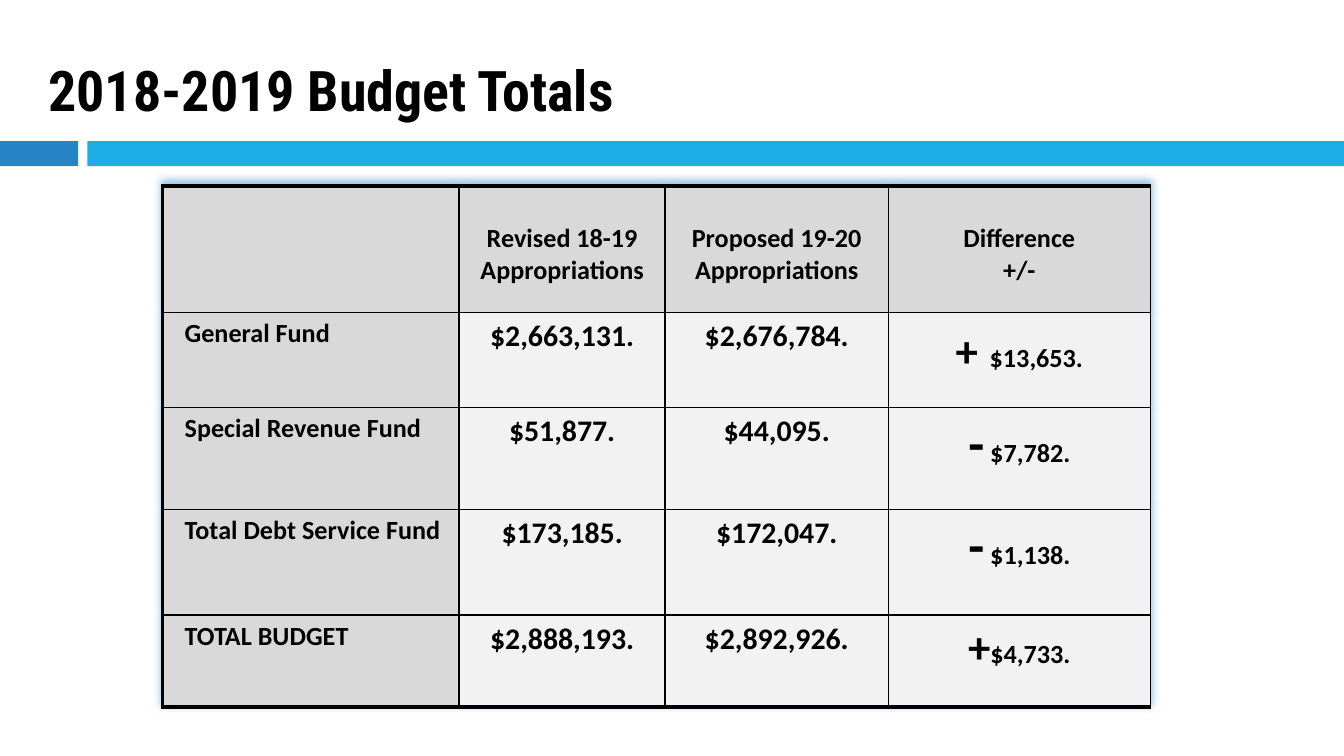
from dataclasses import dataclass

from lxml import etree
from pptx import Presentation
from pptx.dml.color import RGBColor
from pptx.enum.shapes import MSO_SHAPE
from pptx.enum.text import MSO_ANCHOR, MSO_AUTO_SIZE, PP_ALIGN
from pptx.oxml.ns import qn
from pptx.util import Cm, Pt

RECTANGLE = MSO_SHAPE.RECTANGLE
LEFT, CENTER = PP_ALIGN.LEFT, PP_ALIGN.CENTER
TOP, MIDDLE = MSO_ANCHOR.TOP, MSO_ANCHOR.MIDDLE
NO_AUTOFIT = MSO_AUTO_SIZE.NONE
TITLE_ONLY = 5


@dataclass(frozen=True)
class Theme:
    """Colours, fonts and type sizes of the slide."""

    text: str = "000000"
    border: str = "000000"
    dark_bar: str = "2683C6"
    light_bar: str = "1CADE4"
    label_fill: str = "D9D9D9"
    value_fill: str = "F2F2F2"
    title_font: str = "Roboto Condensed"
    table_font: str = "Calibri"
    title: int = 30
    label: int = 14
    amount: int = 16
    plus: int = 24
    minus: int = 28
    thin: float = 1
    thick: float = 2.25


THEME = Theme()
COLUMN_WIDTHS = (5.61, 3.89, 4.22, 4.95)
ROW_HEIGHTS = (2.4, 1.79, 1.93, 2.0, 1.73)
HEADERS = (
    (),
    ("Revised 18-19", "Appropriations"),
    ("Proposed 19-20", "Appropriations"),
    ("Difference", "+/-"),
)
FUNDS = (
    ("General Fund", "$2,663,131.", "$2,676,784.",
     (("+", THEME.plus), (" ", THEME.minus), ("$13,653.", THEME.label))),
    ("Special Revenue Fund", "$51,877.", "$44,095.",
     (("-", THEME.minus), (" $7,782.", THEME.label))),
    ("Total Debt Service Fund", "$173,185.", "$172,047.",
     (("-", THEME.minus), (" $1,138.", THEME.label))),
    ("TOTAL BUDGET", "$2,888,193.", "$2,892,926.",
     (("+", THEME.plus), ("$4,733.", THEME.label))),
)


def add_run(paragraph, text, size, font_name):
    """Add one bold run to a paragraph."""
    run = paragraph.add_run()
    run.text = text
    run.font.name = font_name
    run.font.size = Pt(size)
    run.font.bold = True
    run.font.color.rgb = RGBColor.from_string(THEME.text)


def set_title(slide, text):
    """Place and fill the title placeholder."""
    title = slide.shapes.title
    title.left, title.top = Cm(0.66), Cm(0.74)
    title.width, title.height = Cm(19.35), Cm(1.9)
    frame = title.text_frame
    frame.auto_size = NO_AUTOFIT
    frame.vertical_anchor = MIDDLE
    paragraph = frame.paragraphs[0]
    paragraph.alignment = LEFT
    add_run(paragraph, text, THEME.title, THEME.title_font)


def add_bar(slide, left, width, color):
    """Add one segment of the band under the title."""
    bar = slide.shapes.add_shape(RECTANGLE, Cm(left), Cm(2.67), Cm(width), Cm(0.47))
    bar.shadow.inherit = False
    bar.fill.solid()
    bar.fill.fore_color.rgb = RGBColor.from_string(color)
    bar.line.fill.background()


def add_color(parent, color):
    """Append an RGB colour element and return it."""
    return etree.SubElement(parent, qn("a:srgbClr"), val=color)


def style_cell(cell, row, column):
    """Give a cell its borders, fill and margins."""
    properties = cell._tc.get_or_add_tcPr()
    outer_sides = {
        "L": column == 0,
        "R": False,
        "T": row == 0,
        "B": row == len(FUNDS),
    }
    for side, is_outer in outer_sides.items():
        width = Pt(THEME.thick if is_outer else THEME.thin)
        line = etree.SubElement(properties, qn(f"a:ln{side}"), w=str(width))
        add_color(etree.SubElement(line, qn("a:solidFill")), THEME.border)
    is_label = row == 0 or column == 0
    cell.fill.solid()
    cell.fill.fore_color.rgb = RGBColor.from_string(
        THEME.label_fill if is_label else THEME.value_fill)
    cell.margin_left = Cm(0.42 if column == 0 else 0.18)
    cell.margin_right = Cm(0.18)
    cell.margin_top = Cm(0.7 if row == 0 else 0.1)
    cell.margin_bottom = Cm(0.1)
    cell.vertical_anchor = TOP


def fill_cell(cell, lines, alignment):
    """Write lines of (text, size) runs into a cell."""
    paragraph = cell.text_frame.paragraphs[0]
    paragraph.alignment = alignment
    for index, runs in enumerate(lines):
        if index:
            paragraph.add_line_break()
        for text, size in runs:
            add_run(paragraph, text, size, THEME.table_font)


def add_table_shadow(table):
    """Add a soft blue shadow around the table."""
    properties = table._tbl.tblPr
    effects = etree.Element(qn("a:effectLst"))
    shadow = etree.SubElement(
        effects, qn("a:outerShdw"), blurRad=str(Cm(0.14)), dist=str(Cm(0.07)),
        dir="16200000", rotWithShape="0")
    color = add_color(shadow, THEME.dark_bar)
    etree.SubElement(color, qn("a:alpha"), val="50000")
    properties.insert(0, effects)


def add_budget_table(slide):
    """Add the table of funds, appropriations and differences."""
    table = slide.shapes.add_table(
        len(ROW_HEIGHTS), len(COLUMN_WIDTHS), Cm(3.07), Cm(3.51),
        Cm(sum(COLUMN_WIDTHS)), Cm(sum(ROW_HEIGHTS))).table
    table.first_row = False
    table.horz_banding = False
    add_table_shadow(table)
    for column, width in zip(table.columns, COLUMN_WIDTHS):
        column.width = Cm(width)
    for row, height in zip(table.rows, ROW_HEIGHTS):
        row.height = Cm(height)

    rows = [[[((line, THEME.label),) for line in header] for header in HEADERS]]
    for label, revised, proposed, difference in FUNDS:
        rows.append([
            [((label, THEME.label),)],
            [((revised, THEME.amount),)],
            [((proposed, THEME.amount),)],
            [difference],
        ])
    for row, contents in enumerate(rows):
        for column, lines in enumerate(contents):
            cell = table.cell(row, column)
            style_cell(cell, row, column)
            fill_cell(cell, lines, CENTER if column else LEFT)


def main():
    """Build and save the budget slide."""
    presentation = Presentation()
    presentation.slide_width, presentation.slide_height = Cm(25.4), Cm(14.29)
    slide = presentation.slides.add_slide(presentation.slide_layouts[TITLE_ONLY])
    add_bar(slide, 0, 1.48, THEME.dark_bar)
    add_bar(slide, 1.65, 23.75, THEME.light_bar)
    set_title(slide, "2018-2019 Budget Totals")
    add_budget_table(slide)
    presentation.save("out.pptx")


if __name__ == "__main__":
    main()
